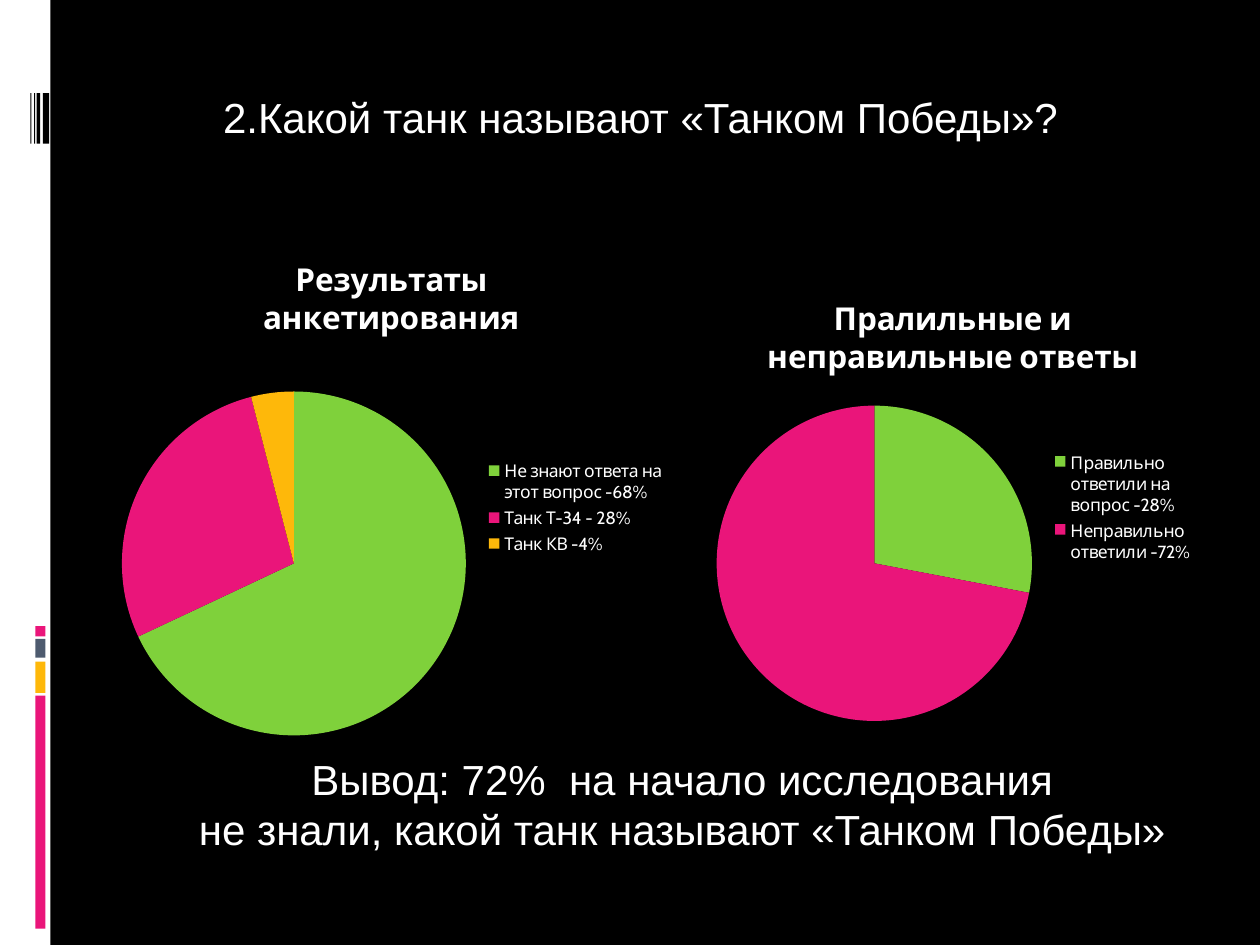
from typing import NamedTuple

from pptx import Presentation
from pptx.chart.data import CategoryChartData
from pptx.dml.color import RGBColor
from pptx.enum.chart import XL_CHART_TYPE as ChartType, XL_LEGEND_POSITION as LegendPos
from pptx.enum.shapes import MSO_SHAPE as Shape
from pptx.enum.text import MSO_ANCHOR as Anchor, PP_ALIGN as Align
from pptx.oxml.xmlchemy import OxmlElement
from pptx.util import Inches, Pt

BLACK = RGBColor(0x00, 0x00, 0x00)
WHITE = RGBColor(0xFF, 0xFF, 0xFF)
GREEN = RGBColor(0x7F, 0xD1, 0x3B)
PINK = RGBColor(0xEA, 0x15, 0x7A)
AMBER = RGBColor(0xFE, 0xB8, 0x0A)
SLATE = RGBColor(0x4E, 0x5B, 0x6F)
SLICE_COLORS = (GREEN, PINK, AMBER)


class Box(NamedTuple):
    left: float
    top: float
    width: float
    height: float

    def emu(self) -> list:
        return [Inches(v) for v in self]


class Bar(NamedTuple):
    box: Box
    color: RGBColor


class Pie(NamedTuple):
    box: Box
    title: str
    slices: dict[str, int]


BARS = [
    Bar(Box(0, 0, 0.4, 7.5), WHITE),
    # Coloured column
    Bar(Box(0.28, 5.52, 0.08, 1.85), PINK),
    Bar(Box(0.28, 5.25, 0.08, 0.25), AMBER),
    Bar(Box(0.28, 5.07, 0.08, 0.15), SLATE),
    Bar(Box(0.28, 4.97, 0.08, 0.08), PINK),
    # Thin black stripes
    *(Bar(Box(left, 0.74, width, 0.4), BLACK)
      for left, width in ((0.34, 0.05), (0.29, 0.03), (0.27, 0.01), (0.24, 0.01))),
]

PIES = [
    Pie(Box(0.83, 1.86, 4.55, 4.33), "Результаты анкетирования",
        {"Не знают ответа на этот вопрос -68%": 68,
         "Танк Т-34 - 28%": 28,
         "Танк КВ -4%": 4}),
    Pie(Box(5.55, 2.18, 4.02, 3.7), "Пралильные и неправильные ответы",
        {"Правильно ответили на вопрос -28%": 28,
         "Неправильно ответили -72%": 72}),
]


def set_font(font, *, size: float, name: str, bold: bool = False) -> None:
    font.size, font.name, font.bold = Pt(size), name, bold
    font.color.rgb = WHITE


def set_text(sp, lines: list[str], *, box: Box, align=Align.LEFT,
             anchor=Anchor.TOP, wrap: bool = True) -> None:
    sp.left, sp.top, sp.width, sp.height = box.emu()
    tf = sp.text_frame
    tf.word_wrap, tf.vertical_anchor = wrap, anchor
    for i, line in enumerate(lines):
        p = tf.add_paragraph() if i else tf.paragraphs[0]
        p.alignment = align
        p.space_before = Pt(0)
        pPr = p._p.get_or_add_pPr()
        pPr.set("marL", "0")
        pPr.set("indent", "0")
        pPr.append(OxmlElement("a:buNone"))
        r = p.add_run()
        r.text = line
        set_font(r.font, size=24, name="Arial")


def draw_bar(slide, bar: Bar) -> None:
    sp = slide.shapes.add_shape(Shape.RECTANGLE, *bar.box.emu())
    sp.shadow.inherit = False
    sp.fill.solid()
    sp.fill.fore_color.rgb = bar.color
    sp.line.fill.background()


def draw_pie(slide, pie: Pie) -> None:
    data = CategoryChartData()
    data.categories = list(pie.slices)
    data.add_series("Series 1", list(pie.slices.values()))
    chart = slide.shapes.add_chart(ChartType.PIE, *pie.box.emu(), data).chart
    set_font(chart.font, size=10, name="Cabin")

    chart.has_title = True
    p = chart.chart_title.text_frame.paragraphs[0]
    r = p.add_run()
    r.text = pie.title
    set_font(r.font, size=18, name="Cabin", bold=True)

    chart.has_legend = True
    chart.legend.position = LegendPos.RIGHT
    chart.legend.include_in_layout = False

    plot = chart.plots[0]
    plot.vary_by_categories = True
    for i, color in enumerate(SLICE_COLORS[:len(pie.slices)]):
        fill = plot.series[0].points[i].format.fill
        fill.solid()
        fill.fore_color.rgb = color


def main() -> None:
    prs = Presentation()
    prs.slide_width, prs.slide_height = Inches(10), Inches(7.5)
    slide = prs.slides.add_slide(prs.slide_layouts[1])
    slide.background.fill.solid()
    slide.background.fill.fore_color.rgb = BLACK

    # Side decoration
    for bar in BARS:
        draw_bar(slide, bar)

    # Survey charts
    for pie in PIES:
        draw_pie(slide, pie)

    # Question and conclusion
    title, body = slide.placeholders
    set_text(title, ["2.Какой танк называют «Танком Победы»?"],
             box=Box(1.67, 0.68, 6.89, 0.5), anchor=Anchor.MIDDLE, wrap=False)
    set_text(body, ["Вывод: 72%  на начало исследования",
                    "не знали, какой танк называют «Танком Победы»"],
             box=Box(0.83, 5.93, 9.17, 1.21), align=Align.CENTER)

    prs.save("out.pptx")


if __name__ == "__main__":
    main()
